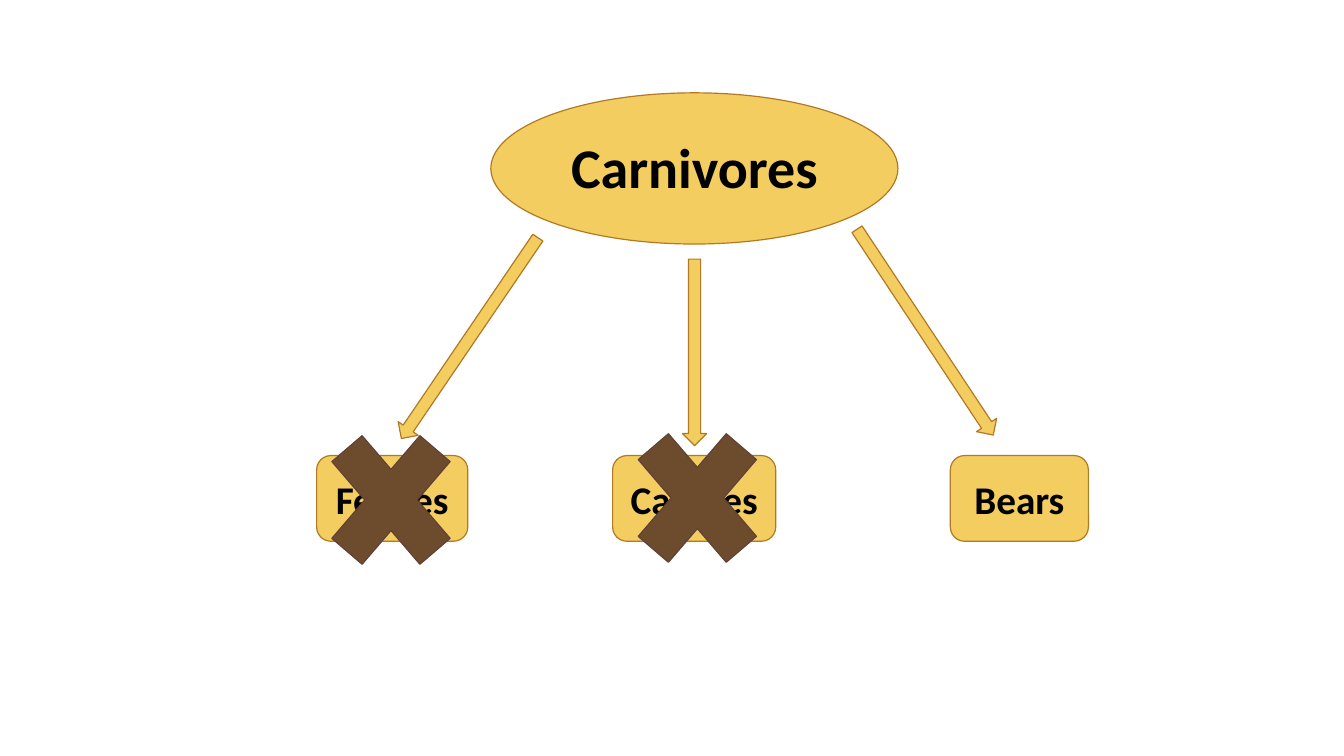
import pptx
import pptx.dml.color
import pptx.enum.shapes
import pptx.enum.text
import pptx.util

Cm, Pt = pptx.util.Cm, pptx.util.Pt
Preset = pptx.enum.shapes.MSO_SHAPE

# Content: lengths in centimetres
TITLE = {"text": "Carnivores", "box": (12.37, 2.34, 10.26, 3.81)}
FAMILIES = [  # name, left, width
    ("Felines", 7.98, 3.81),
    ("Canines", 15.44, 4.11),
    ("Bears", 23.95, 3.48),
]
ARROWS = [  # left, top, length, rotation in degrees
    (17.2, 6.53, 4.7, 0),
    (11.53, 5.46, 6.12, 34.2),
    (23.01, 5.26, 6.22, 326.5),
]
CROSSES = [(7.72, 10.11), (15.44, 10.06)]  # left, top

# Shared sizes and colours
FAMILY_TOP, FAMILY_HEIGHT = 11.48, 2.16
ARROW_WIDTH = 0.61
CROSS_WIDTH, CROSS_HEIGHT = 4.27, 4.98
GOLD, GOLD_EDGE = "F3CD60", "B27822"
BROWN, BROWN_EDGE = "6C4C2C", "624139"


def color(hex_string):
    return pptx.dml.color.RGBColor.from_string(hex_string)


def add_preset(slide, preset, box, fill=GOLD, edge=GOLD_EDGE):
    shape = slide.shapes.add_shape(preset, *[Cm(length) for length in box])
    shape.shadow.inherit = False
    shape.fill.solid()
    shape.fill.fore_color.rgb = color(fill)
    shape.line.color.rgb = color(edge)
    shape.line.width = Pt(0.85)
    return shape


def write_text(shape, text, size=28, font="Calibri", ink="000000", spacing=None):
    frame = shape.text_frame
    frame.word_wrap = True
    frame.vertical_anchor = pptx.enum.text.MSO_ANCHOR.MIDDLE
    paragraph = frame.paragraphs[0]
    paragraph.alignment = pptx.enum.text.PP_ALIGN.CENTER
    if spacing:
        paragraph.line_spacing = Pt(spacing)
    run = paragraph.add_run()
    run.text = text
    run.font.name = font
    run.font.size = Pt(size)
    run.font.bold = True
    run.font.color.rgb = color(ink)


def main():
    presentation = pptx.Presentation()
    presentation.slide_width = Cm(33.87)
    presentation.slide_height = Cm(19.05)
    slide = presentation.slides.add_slide(presentation.slide_layouts[6])

    # Top of the tree
    ellipse = add_preset(slide, Preset.OVAL, TITLE["box"])
    write_text(ellipse, TITLE["text"], size=40, spacing=44)

    # Families
    for name, left, width in FAMILIES:
        box = (left, FAMILY_TOP, width, FAMILY_HEIGHT)
        write_text(add_preset(slide, Preset.ROUNDED_RECTANGLE, box), name)

    # Branches
    for left, top, length, rotation in ARROWS:
        arrow = add_preset(slide, Preset.DOWN_ARROW, (left, top, ARROW_WIDTH, length))
        arrow.rotation = rotation

    # Crossed-out families
    for left, top in CROSSES:
        box = (left, top, CROSS_WIDTH, CROSS_HEIGHT)
        add_preset(slide, Preset.MATH_MULTIPLY, box, fill=BROWN, edge=BROWN_EDGE)

    presentation.save("out.pptx")


if __name__ == "__main__":
    main()
